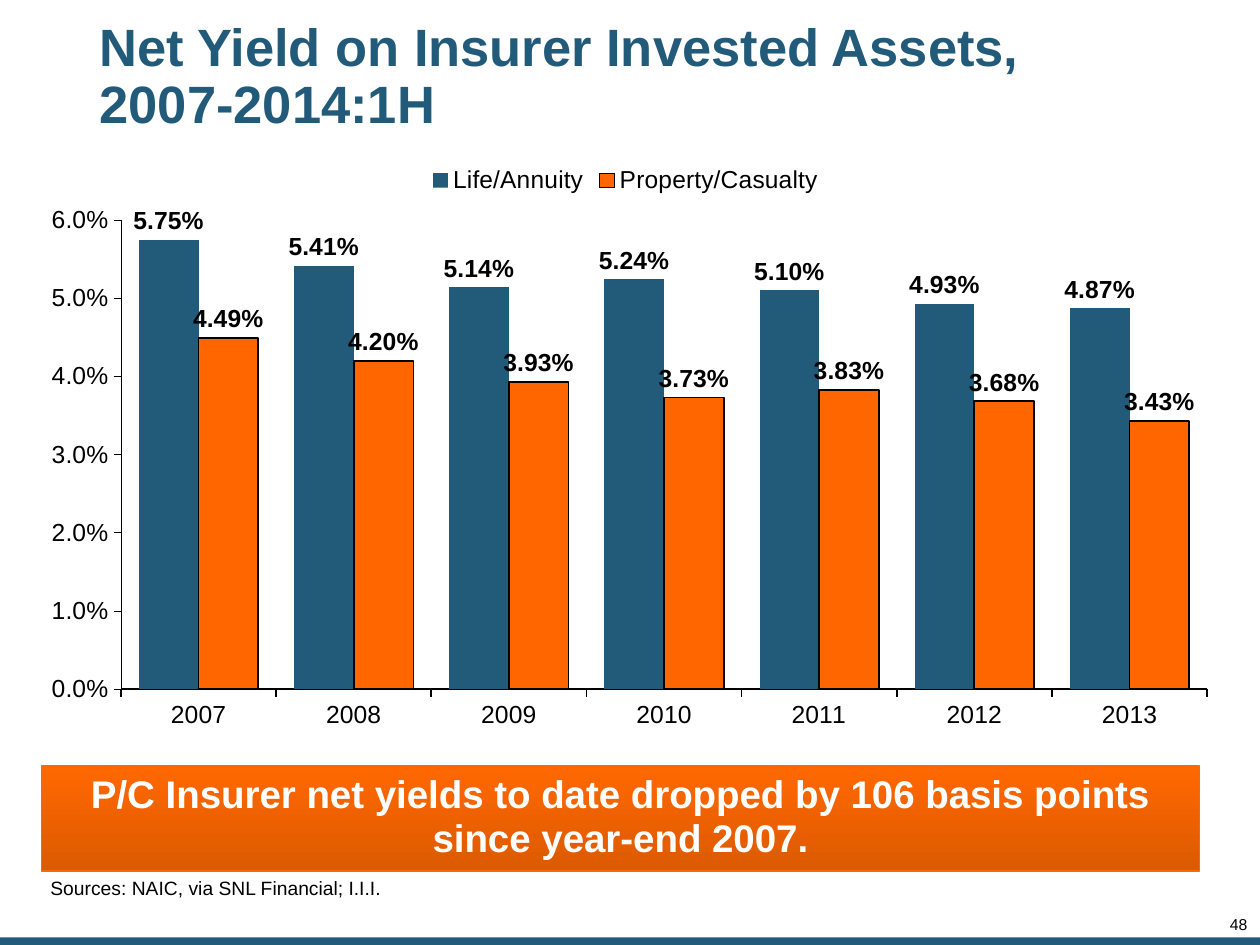
from dataclasses import dataclass

from lxml.etree import SubElement
from pptx import Presentation
from pptx.chart.data import CategoryChartData
from pptx.dml.color import RGBColor as RGB
from pptx.enum.chart import XL_CHART_TYPE as CT, XL_LABEL_POSITION as LP
from pptx.enum.chart import XL_LEGEND_POSITION as LEG, XL_TICK_MARK as TICK
from pptx.enum.shapes import MSO_SHAPE as SHAPE
from pptx.enum.text import MSO_ANCHOR as ANCHOR, PP_ALIGN as ALIGN
from pptx.oxml.ns import qn
from pptx.util import Inches, Pt


@dataclass(frozen=True)
class Theme:
    font: str = "Arial"
    blue: str = "225A7A"
    orange: str = "FF6600"
    glow: str = "FF6801"
    rust: str = "DC5A01"
    black: str = "000000"
    white: str = "FFFFFF"
    title: float = 30
    banner: float = 22
    axis: float = 14.1
    legend: float = 14
    source: float = 11
    number: float = 9


T = Theme()
W, H = Inches(10), Inches(7.5)
YEARS = [str(y) for y in range(2007, 2014)]
YIELDS = {
    "Life/Annuity": (0.0575, 0.0541, 0.0514, 0.0524, 0.051, 0.0493, 0.0487),
    "Property/Casualty": (0.0449, 0.042, 0.0393, 0.0373, 0.0383, 0.0368, 0.0343),
}


def assign(obj, **values):
    for name, value in values.items():
        setattr(obj, name, value)


def percent(x, y, w, h):
    return [int(v * side / 100) for v, side in zip((x, y, w, h), (W, H, W, H))]


def style_font(font, size, color=T.black, bold=False):
    assign(font, name=T.font, size=Pt(size), bold=bold)
    font.color.rgb = RGB.from_string(color)


def style_line(line, color, width):
    line.color.rgb = RGB.from_string(color)
    line.width = Pt(width)


def solid(fill, color):
    fill.solid()
    fill.fore_color.rgb = RGB.from_string(color)


def write(sp, text, size, color=T.black, bold=False, inset=(0, 0, 0, 0),
          anchor=ANCHOR.TOP, align=ALIGN.LEFT, spacing=0.85):
    tf = sp.text_frame
    sides = ("margin_left", "margin_top", "margin_right", "margin_bottom")
    assign(tf, word_wrap=True, vertical_anchor=anchor,
           **dict(zip(sides, map(Inches, inset))))
    p = tf.paragraphs[0]
    p.text = text
    assign(p, alignment=align, line_spacing=spacing)
    for r in p.runs:
        style_font(r.font, size, color, bold)


def add_text(s, box, text, size, **fmt):
    write(s.shapes.add_textbox(*percent(*box)), text, size, **fmt)


def add_rect(s, box):
    sp = s.shapes.add_shape(SHAPE.RECTANGLE, *percent(*box))
    sp.shadow.inherit = False
    return sp


def add_footer_bar(s):
    sp = add_rect(s, (0, 99.2, 100, 0.8))
    solid(sp.fill, T.blue)
    sp.line.fill.background()


def add_banner(s, box, text):
    sp = add_rect(s, box)
    sp.fill.gradient()
    sp.fill.gradient_angle = 270
    for stop, pos, color in zip(sp.fill.gradient_stops, (0, 1), (T.glow, T.rust)):
        stop.position = pos
        stop.color.rgb = RGB.from_string(color)
    style_line(sp.line, T.glow, 1)
    write(sp, text, T.banner, color=T.white, bold=True, spacing=0.95,
          inset=(0.1, 0.05, 0.1, 0.07), anchor=ANCHOR.MIDDLE, align=ALIGN.CENTER)


def place_plot(chart, x, y, w, h):
    area = chart.plots[0]._element.getparent()
    layout = area.find(qn("c:layout"))
    if layout is None:
        layout = area.makeelement(qn("c:layout"), {})
        area.insert(0, layout)
    manual = SubElement(layout, qn("c:manualLayout"))
    values = dict(layoutTarget="inner", xMode="edge", yMode="edge", x=x, y=y, w=w, h=h)
    for tag, value in values.items():
        SubElement(manual, qn(f"c:{tag}")).set("val", str(value))


def style_axis(axis, width):
    assign(axis, has_major_gridlines=False, major_tick_mark=TICK.OUTSIDE,
           minor_tick_mark=TICK.NONE)
    style_font(axis.tick_labels.font, T.axis)
    style_line(axis.format.line, T.black, width)


def style_series(series, color):
    solid(series.format.fill, color)
    series.invert_if_negative = False
    labels = series.data_labels
    assign(labels, show_value=True, position=LP.OUTSIDE_END,
           number_format="0.00%", number_format_is_linked=False)
    style_font(labels.font, T.axis, bold=True)


def add_yield_chart(s, box):
    data = CategoryChartData(number_format="0.00%")
    data.categories = YEARS
    for name, values in YIELDS.items():
        data.add_series(name, values)
    chart = s.shapes.add_chart(CT.COLUMN_CLUSTERED, *percent(*box), data).chart
    assign(chart, has_title=False, has_legend=True)
    style_font(chart.font, T.axis)
    assign(chart.legend, position=LEG.TOP, include_in_layout=False)
    style_font(chart.legend.font, T.legend)
    assign(chart.plots[0], gap_width=60, overlap=0, vary_by_categories=False)
    style_axis(chart.category_axis, 1)
    style_axis(chart.value_axis, 0.25)
    assign(chart.value_axis, minimum_scale=0, maximum_scale=0.06, major_unit=0.01)
    assign(chart.value_axis.tick_labels, number_format="0.0%",
           number_format_is_linked=False)
    life, casualty = chart.plots[0].series
    style_series(life, T.blue)
    style_series(casualty, T.orange)
    style_line(casualty.format.line, T.black, 1)
    place_plot(chart, 0.068, 0.113, 0.93, 0.784)


def main():
    prs = Presentation()
    assign(prs, slide_width=W, slide_height=H)
    s = prs.slides.add_slide(prs.slide_layouts[6])
    add_footer_bar(s)
    add_text(s, (94.1, 97.07, 4.9, 1.73), "48", T.number, align=ALIGN.RIGHT)
    add_text(s, (7.4, 2.27, 80.7, 12), "Net Yield on Insurer Invested Assets, 2007-2014:1H",
             T.title, color=T.blue, bold=True, spacing=0.9,
             inset=(0.05,) * 4, anchor=ANCHOR.MIDDLE)
    add_text(s, (0, 93.07, 32.9, 4.13), "Sources: NAIC, via SNL Financial; I.I.I.",
             T.source, inset=(0.4, 0, 0, 0.15), anchor=ANCHOR.BOTTOM)
    add_yield_chart(s, (3.3, 16.13, 92.7, 63.33))
    add_banner(s, (3.3, 81.07, 91.9, 11.07),
               "P/C Insurer net yields to date dropped by 106 basis points\v"
               "since year-end 2007.")
    prs.save("out.pptx")


if __name__ == "__main__":
    main()
